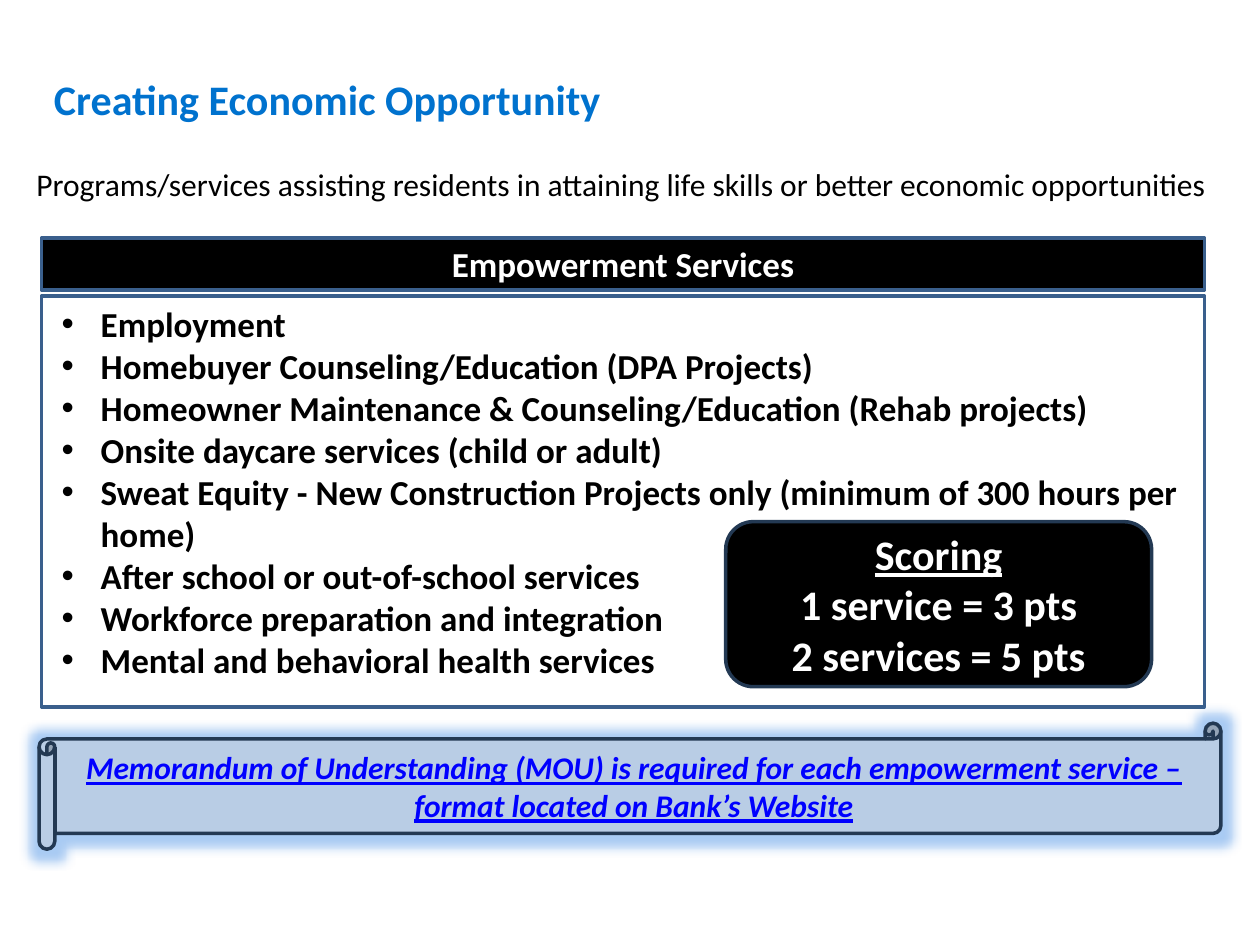
from dataclasses import dataclass

from lxml.etree import SubElement
from pptx import Presentation
from pptx.dml.color import RGBColor
from pptx.enum.shapes import MSO_SHAPE
from pptx.enum.text import MSO_ANCHOR, PP_ALIGN
from pptx.oxml.ns import qn
from pptx.shapes.autoshape import Shape
from pptx.slide import Slide
from pptx.util import Inches, Pt

BLACK = RGBColor(0x00, 0x00, 0x00)
WHITE = RGBColor(0xFF, 0xFF, 0xFF)
TITLE = RGBColor(0x00, 0x72, 0xCE)
LINK = RGBColor(0x00, 0x00, 0xFF)
EDGE = RGBColor(0x3A, 0x5F, 0x8C)
NAVY = RGBColor(0x23, 0x39, 0x53)
PALE = RGBColor(0xB9, 0xCD, 0xE5)
GLOW = RGBColor(0x2A, 0x7D, 0xE1)

SERVICES = [
    "Employment",
    "Homebuyer Counseling/Education (DPA Projects)",
    "Homeowner Maintenance & Counseling/Education (Rehab projects)",
    "Onsite daycare services (child or adult)",
    "Sweat Equity - New Construction Projects only (minimum of 300 hours per home)",
    "After school or out-of-school services",
    "Workforce preparation and integration",
    "Mental and behavioral health services",
]
SCORES = ["Scoring", "1 service = 3 pts", "2 services = 5 pts"]
MEMO = ("Memorandum of Understanding (MOU) is required for each empowerment "
        "service – format located on Bank’s Website")


@dataclass(frozen=True)
class Area:
    left: float
    top: float
    width: float
    height: float

    def emu(self) -> list[int]:
        return [Inches(v) for v in (self.left, self.top, self.width, self.height)]


@dataclass(frozen=True)
class Style:
    size: int
    color: RGBColor
    bold: bool = True
    align: PP_ALIGN = PP_ALIGN.CENTER
    anchor: MSO_ANCHOR = MSO_ANCHOR.MIDDLE


def write(shape: Shape, lines: list[str], style: Style) -> None:
    frame = shape.text_frame
    frame.word_wrap = True
    frame.vertical_anchor = style.anchor
    frame.text = "\n".join(lines)
    for para in frame.paragraphs:
        para.alignment = style.align
        font = para.font
        font.name = "Calibri"
        font.size = Pt(style.size)
        font.bold = style.bold
        font.color.rgb = style.color


def label(slide: Slide, area: Area, text: str, style: Style) -> None:
    write(slide.shapes.add_textbox(*area.emu()), [text], style)


def panel(slide: Slide, kind: MSO_SHAPE, area: Area, fill: RGBColor,
          edge: RGBColor, lines: list[str], style: Style) -> Shape:
    shape = slide.shapes.add_shape(kind, *area.emu())
    shape.shadow.inherit = False
    shape.fill.solid()
    shape.fill.fore_color.rgb = fill
    shape.line.color.rgb = edge
    shape.line.width = Pt(2)
    write(shape, lines, style)
    return shape


def bullet(shape: Shape, indent: float) -> None:
    """Give every paragraph a hanging bullet."""
    for para in shape.text_frame.paragraphs:
        props = para._p.get_or_add_pPr()
        props.set("marL", str(Inches(indent)))
        props.set("indent", str(Inches(-indent)))
        mark = SubElement(props, qn("a:buChar"))
        mark.set("char", "•")
        props.insert(0, mark)
        face = SubElement(props, qn("a:buFont"))
        face.set("typeface", "Arial")
        props.insert(0, face)


def glow(shape: Shape, radius: int) -> None:
    effects = shape._element.spPr.find(qn("a:effectLst"))
    halo = SubElement(effects, qn("a:glow"), rad=str(radius))
    color = SubElement(halo, qn("a:srgbClr"), val=str(GLOW))
    SubElement(color, qn("a:alpha"), val="40000")


def main() -> None:
    deck = Presentation()
    deck.slide_width, deck.slide_height = Inches(10), Inches(7.5)
    slide = deck.slides.add_slide(deck.slide_layouts[6])

    label(slide, Area(0.33, 0.47, 8.35, 0.62), "Creating Economic Opportunity",
          Style(24, TITLE, align=PP_ALIGN.LEFT))
    label(slide, Area(0.19, 1.26, 9.62, 0.4),
          "Programs/services assisting residents in attaining life skills "
          "or better economic opportunities",
          Style(18, BLACK, False, PP_ALIGN.LEFT, MSO_ANCHOR.TOP))

    body = panel(slide, MSO_SHAPE.RECTANGLE, Area(0.33, 2.35, 9.23, 3.26),
                 WHITE, EDGE, SERVICES,
                 Style(20, BLACK, align=PP_ALIGN.LEFT, anchor=MSO_ANCHOR.TOP))
    body.text_frame.margin_left = Inches(0.16)
    bullet(body, 0.31)
    panel(slide, MSO_SHAPE.RECTANGLE, Area(0.33, 1.89, 9.23, 0.41),
          BLACK, EDGE, ["Empowerment Services"], Style(20, WHITE))

    scroll = panel(slide, MSO_SHAPE.HORIZONTAL_SCROLL, Area(0.31, 5.74, 9.38, 1),
                   PALE, NAVY, [MEMO], Style(18, LINK))
    font = scroll.text_frame.paragraphs[0].font
    font.italic = font.underline = True
    glow(scroll, Pt(11))

    score = panel(slide, MSO_SHAPE.ROUNDED_RECTANGLE, Area(5.76, 4.14, 3.38, 1.31),
                  BLACK, NAVY, SCORES, Style(24, WHITE))
    score.text_frame.paragraphs[0].font.underline = True

    deck.save("out.pptx")


if __name__ == "__main__":
    main()
